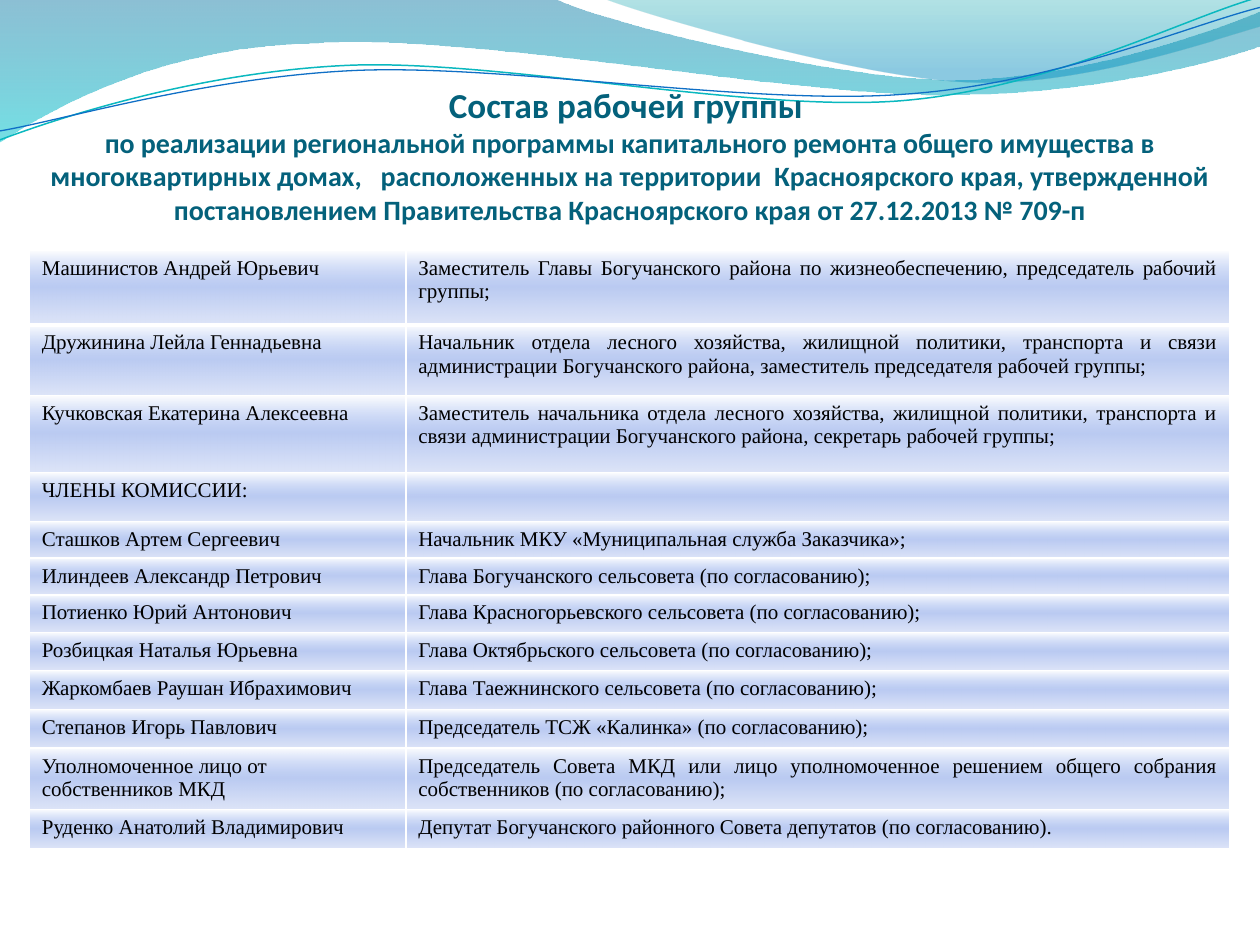
"""Slide with the members of a working group in a table under a wave header."""
import pptx
import pptx.dml.color
import pptx.enum.text
import pptx.oxml
import pptx.oxml.ns
import pptx.util

Cm = pptx.util.Cm
Pt = pptx.util.Pt
RGBColor = pptx.dml.color.RGBColor
PP_ALIGN = pptx.enum.text.PP_ALIGN
qn = pptx.oxml.ns.qn

TEAL = RGBColor(0x04, 0x61, 0x7B)
BLACK = RGBColor(0x00, 0x00, 0x00)
WHITE = RGBColor(0xFF, 0xFF, 0xFF)
CYAN = RGBColor(0x0A, 0xB8, 0xBF)
BLUE = RGBColor(0x0F, 0x6F, 0xC6)

WIDE_STOPS = [(0, RGBColor(0x00, 0x74, 0xA1), 45), (100, RGBColor(0x00, 0xC6, 0xCF), 55)]
RIGHT_STOPS = [(0, RGBColor(0x00, 0xA1, 0xA9), 30), (80, RGBColor(0x00, 0x8B, 0xBF), 45)]
CELL_STOPS = [
    (0, RGBColor(0x8E, 0xAB, 0xEE), 0),
    (50, RGBColor(0xBB, 0xCB, 0xF2), 100),
    (100, RGBColor(0xDE, 0xE5, 0xF8), 100),
]

WIDE_WAVE = [
    [(0, 0)],
    [(11.18, -0.03)],
    [(12.09, 0.43), (16.87, 1.6), (19.25, 1.6)],
    [(21.67, 1.6), (24.33, 0.66), (25.4, 0.23)],
    [(25.43, 0.91)],
    [(24.97, 1.12), (22.1, 1.93), (18.95, 1.91)],
    [(15.8, 1.91), (9.7, 0.71), (6.53, 0.86)],
    [(3.28, 0.91), (1.17, 2.11), (-0.03, 2.87)],
]
RIGHT_WAVE = [
    [(12.17, -0.03)],
    [(12.93, 0.28), (17.32, 1.57), (19.53, 1.65)],
    [(21.74, 1.75), (24.41, 0.81), (25.4, 0.53)],
    [(25.4, 0)],
]
CYAN_CURVE = [
    [(-0.05, 2.22)],
    [(1.19, 1.82), (4.02, 1.04), (7.05, 1.05)],
    [(10.05, 1.07), (15.02, 2.37), (18.08, 2.29)],
    [(21.13, 2.2), (23.86, 0.91), (25.41, 0.55)],
]
BLUE_CURVE = [
    [(-0.04, 2.04)],
    [(1.16, 1.9), (4.17, 1.15), (7.2, 1.16)],
    [(10.25, 1.18), (15.13, 2.25), (18.19, 2.16)],
    [(21.22, 2.1), (23.93, 1.06), (25.45, 0.75)],
]
CURVE_ROTATION = 357.3

HEADING = "Состав рабочей группы "
SUBHEADING = (
    "по реализации региональной программы капитального ремонта общего имущества в "
    "многоквартирных домах,   расположенных на территории  Красноярского края, "
    "утвержденной постановлением Правительства Красноярского края от 27.12.2013 № 709-п"
)
COLUMNS = [7.59, 16.62]
LEFT_ALIGNED = "Уполномоченное лицо от собственников МКД"
MEMBERS = [
    (1.5, "Машинистов Андрей Юрьевич",
     "Заместитель Главы Богучанского района по жизнеобеспечению, председатель рабочий группы;"),
    (1.42, "Дружинина Лейла Геннадьевна",
     "Начальник отдела лесного хозяйства, жилищной политики, транспорта и связи "
     "администрации Богучанского района, заместитель председателя рабочей группы;"),
    (1.55, "Кучковская Екатерина Алексеевна",
     "Заместитель начальника отдела лесного хозяйства, жилищной политики, транспорта и "
     "связи администрации Богучанского района, секретарь рабочей группы;"),
    (0.99, "ЧЛЕНЫ КОМИССИИ:", ""),
    (0.74, "Сташков Артем Сергеевич", "Начальник МКУ «Муниципальная служба Заказчика»;"),
    (0.74, "Илиндеев Александр Петрович", "Глава Богучанского сельсовета (по согласованию);"),
    (0.76, "Потиенко Юрий Антонович", "Глава Красногорьевского сельсовета (по согласованию);"),
    (0.77, "Розбицкая Наталья Юрьевна", "Глава Октябрьского сельсовета (по согласованию);"),
    (0.78, "Жаркомбаев Раушан Ибрахимович", "Глава Таежнинского сельсовета (по согласованию);"),
    (0.78, "Степанов Игорь Павлович", "Председатель ТСЖ «Калинка» (по согласованию);"),
    (1.24, LEFT_ALIGNED,
     "Председатель Совета МКД или лицо уполномоченное решением общего собрания "
     "собственников (по согласованию);"),
    (0.78, "Руденко Анатолий Владимирович",
     "Депутат Богучанского районного Совета депутатов (по согласованию)."),
]


def add_text(p, text, *, size, font, color, bold=False, align=PP_ALIGN.JUSTIFY):
    """Add a formatted run to a paragraph."""
    p.alignment = align
    r = p.add_run()
    r.text = text
    r.font.size, r.font.name, r.font.bold = Pt(size), font, bold
    r.font.color.rgb = color


def make(tag, attributes="", content=""):
    """Make a drawing element."""
    return pptx.oxml.parse_xml(
        f'<a:{tag} {pptx.oxml.ns.nsdecls("a")} {attributes}>{content}</a:{tag}>'
    )


def set_gradient(fill, props, stops):
    """Fill a shape or cell with a vertical gradient of (position, colour, opacity)."""
    fill.background()
    gs = "".join(
        f'<a:gs pos="{pos * 1000}"><a:srgbClr val="{color}">'
        f'<a:alpha val="{alpha * 1000}"/></a:srgbClr></a:gs>'
        for pos, color, alpha in stops
    )
    grad = make("gradFill", 'rotWithShape="1"',
                f'<a:gsLst>{gs}</a:gsLst><a:lin ang="5400000" scaled="0"/>')
    props.replace(props.find(qn("a:noFill")), grad)


def set_borders(cell, bottom):
    """Draw white borders around a cell."""
    tcPr = cell._tc.get_or_add_tcPr()
    color = f'<a:solidFill><a:srgbClr val="{WHITE}"/></a:solidFill>'
    for i, (side, width) in enumerate({"L": 1, "R": 1, "T": 1, "B": bottom}.items()):
        tcPr.insert(i, make(f"ln{side}", f'w="{Pt(width)}"', color))


def add_outline(s, segments, closed):
    """Add a freeform in which each segment of three points is a Bezier curve."""
    points = [(Cm(x), Cm(y)) for segment in segments for x, y in segment]
    builder = s.shapes.build_freeform(*points[0])
    builder.add_line_segments(points[1:], close=closed)
    sp = builder.convert_to_shape()
    sp.shadow.inherit = False
    lines = iter(list(sp._element.spPr.iter(qn("a:lnTo"))))
    for segment in segments[1:]:
        group = [next(lines) for _ in segment]
        if len(group) == 3:
            curve = make("cubicBezTo")
            group[0].addprevious(curve)
            for line in group:
                curve.append(line[0])
                line.getparent().remove(line)
    return sp


def add_wave(s, segments, stops):
    """Add a gradient wave without a line."""
    sp = add_outline(s, segments, True)
    set_gradient(sp.fill, sp._element.spPr, stops)
    sp.line.fill.background()


def add_curve(s, segments, color, width):
    """Add a thin open curve, slightly rotated."""
    sp = add_outline(s, segments, False)
    sp.rotation = CURVE_ROTATION
    sp.fill.background()
    sp.line.color.rgb = color
    sp.line.width = Pt(width)


def format_title(s):
    """Place the title above the waves and write both of its parts."""
    sp = s.shapes.title
    s.shapes._spTree.append(sp._element)
    sp.left, sp.top, sp.width, sp.height = Cm(0), Cm(0.58), Cm(25.4), Cm(4.57)
    tf = sp.text_frame
    tf.word_wrap = True
    tf.auto_size = pptx.enum.text.MSO_AUTO_SIZE.NONE
    tf.vertical_anchor = pptx.enum.text.MSO_ANCHOR.BOTTOM
    tf.margin_left = tf.margin_right = 0
    tf.margin_top, tf.margin_bottom = Cm(0.13), Cm(0.59)
    p = tf.paragraphs[0]
    style = dict(font="Calibri", color=TEAL, bold=True, align=PP_ALIGN.CENTER)
    add_text(p, HEADING, size=20, **style)
    p.add_line_break()
    add_text(p, SUBHEADING, size=16, **style)


def add_members(s):
    """Add the table of members and their posts."""
    height = sum(row[0] for row in MEMBERS)
    table = s.shapes.add_table(
        len(MEMBERS), len(COLUMNS), Cm(0.59), Cm(5.05), Cm(sum(COLUMNS)), Cm(height)
    ).table
    table.first_row = table.horz_banding = False
    for column, width in zip(table.columns, COLUMNS):
        column.width = Cm(width)
    for i, (row_height, *texts) in enumerate(MEMBERS):
        table.rows[i].height = Cm(row_height)
        for j, text in enumerate(texts):
            cell = table.cell(i, j)
            align = PP_ALIGN.LEFT if text == LEFT_ALIGNED else PP_ALIGN.JUSTIFY
            add_text(cell.text_frame.paragraphs[0], text, size=12,
                     font="Times New Roman", color=BLACK, align=align)
            set_gradient(cell.fill, cell._tc.get_or_add_tcPr(), CELL_STOPS)
            set_borders(cell, bottom=3 if i == 0 else 1)


def main():
    """Build and save the slide."""
    prs = pptx.Presentation()
    prs.slide_width, prs.slide_height = Cm(25.4), Cm(19.05)
    s = prs.slides.add_slide(prs.slide_layouts[5])
    add_wave(s, WIDE_WAVE, WIDE_STOPS)
    add_wave(s, RIGHT_WAVE, RIGHT_STOPS)
    add_curve(s, CYAN_CURVE, CYAN, 0.85)
    add_curve(s, BLUE_CURVE, BLUE, 0.75)
    format_title(s)
    add_members(s)
    prs.save("out.pptx")


if __name__ == "__main__":
    main()
